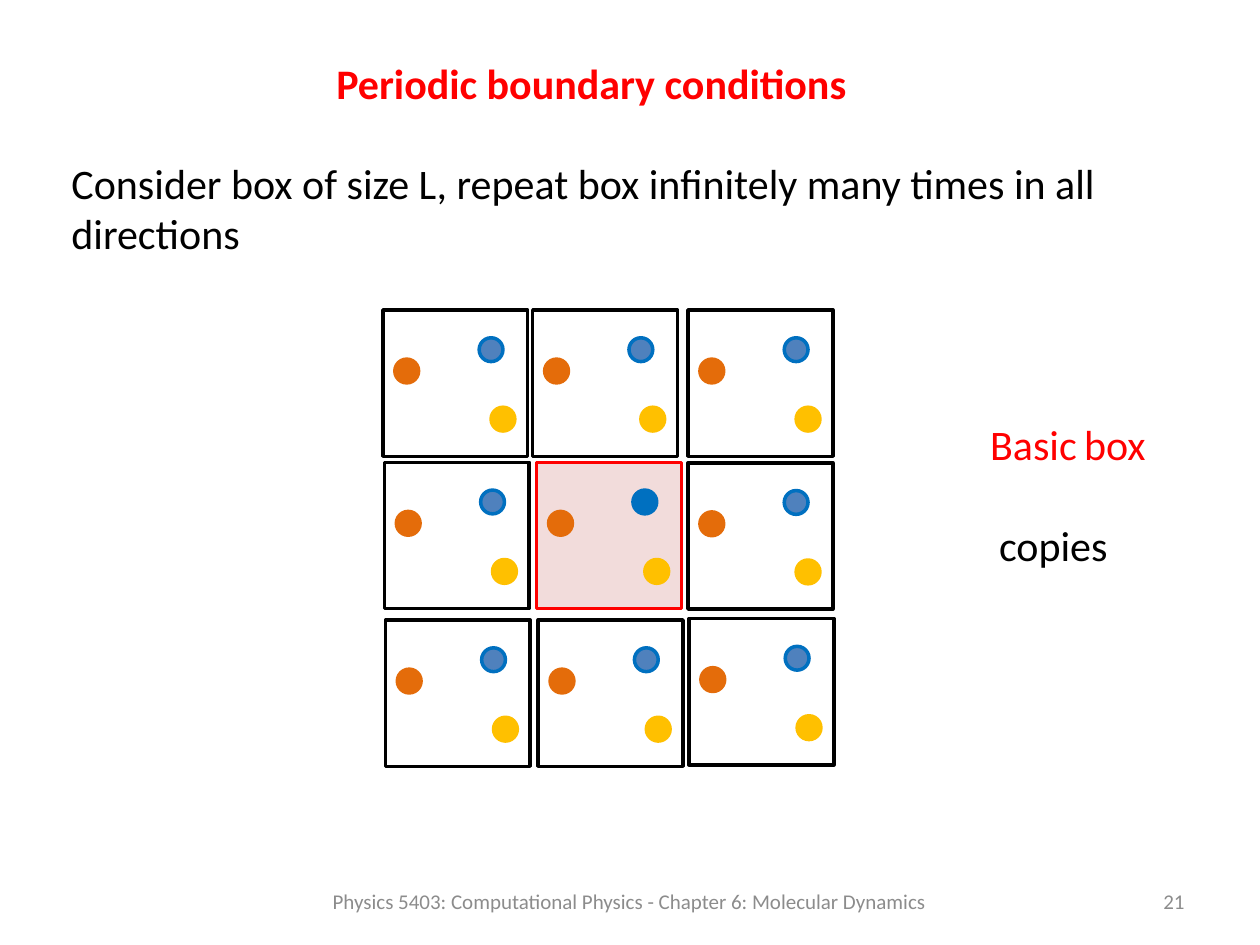
from dataclasses import dataclass

from pptx import Presentation
from pptx.dml.color import RGBColor
from pptx.enum.shapes import MSO_SHAPE
from pptx.enum.text import MSO_ANCHOR, MSO_AUTO_SIZE, PP_ALIGN
from pptx.util import Cm, Pt


@dataclass(frozen=True)
class Theme:
    font: str = "Calibri"
    body_size: int = 24
    space_size: int = 18
    footer_size: int = 12
    outline: int = 2
    black: str = "000000"
    white: str = "FFFFFF"
    red: str = "FF0000"
    pink: str = "F2DCDB"
    grey: str = "8C8C8C"
    blue: str = "0070C0"
    soft_blue: str = "4F81BD"
    yellow: str = "FFC000"
    orange: str = "E46C0A"


THEME = Theme()

CELL_WIDTH, CELL_HEIGHT = 2.92, 2.95
PARTICLE_SIZE = 0.48
BASIC_CELL = (1, 1)
# Left and top of each cell in cm, by row; the copies sit slightly off the grid.
CELL_ORIGINS = [
    [(7.72, 6.25), (10.74, 6.25), (13.87, 6.25)],
    [(7.75, 9.32), (10.82, 9.32), (13.87, 9.33)],
    [(7.77, 12.5), (10.85, 12.5), (13.89, 12.47)],
]


def add_text(page, box, lines, color, size=THEME.body_size, bold=False,
             align=PP_ALIGN.LEFT, anchor=MSO_ANCHOR.TOP, wrap=True, grow=True):
    """Add a text box; each line is a list of (wording, size or None) spans."""
    frame = page.shapes.add_textbox(*map(Cm, box)).text_frame
    frame.word_wrap = wrap
    frame.vertical_anchor = anchor
    if grow:
        frame.auto_size = MSO_AUTO_SIZE.SHAPE_TO_FIT_TEXT
    for index, spans in enumerate(lines):
        para = frame.add_paragraph() if index else frame.paragraphs[0]
        para.alignment = align
        for wording, own_size in spans:
            span = para.add_run()
            span.text = wording
            span.font.name = THEME.font
            span.font.size = Pt(own_size or size)
            span.font.bold = bold
            span.font.color.rgb = RGBColor.from_string(color)


def add_outlined(group, kind, box, fill, line):
    shape = group.shapes.add_shape(kind, *map(Cm, box))
    shape.shadow.inherit = False
    shape.fill.solid()
    shape.fill.fore_color.rgb = RGBColor.from_string(fill)
    shape.line.color.rgb = RGBColor.from_string(line)
    shape.line.width = Pt(THEME.outline)


def add_cell(page, left, top, basic):
    """Add one simulation box with its three particles, as a group."""
    group = page.shapes.add_group_shape()
    fill, line = (THEME.pink, THEME.red) if basic else (THEME.white, THEME.black)
    add_outlined(group, MSO_SHAPE.RECTANGLE,
                 (left, top, CELL_WIDTH, CELL_HEIGHT), fill, line)
    particles = [
        (1.94, 0.56, THEME.blue if basic else THEME.soft_blue, THEME.blue),
        (2.18, 1.96, THEME.yellow, THEME.yellow),
        (0.24, 0.99, THEME.orange, THEME.orange),
    ]
    for across, down, fill, line in particles:
        add_outlined(group, MSO_SHAPE.OVAL,
                     (left + across, top + down, PARTICLE_SIZE, PARTICLE_SIZE),
                     fill, line)


def add_lattice(page):
    for row, origins in enumerate(CELL_ORIGINS):
        for column, (left, top) in enumerate(origins):
            add_cell(page, left, top, (row, column) == BASIC_CELL)


def add_heading(page):
    add_text(page, (6.53, 1.04, 12.34, 1.27),
             [[("Periodic boundary conditions", None)]], THEME.red, bold=True)
    add_text(page, (1.19, 3.05, 21.34, 2.31), [
        [("Consider box of size L, repeat box infinitely many times in all", None)],
        [("directions", None)],
    ], THEME.black, wrap=False)


def add_legend(page):
    add_text(page, (19.71, 8.31, 3.68, 1.27),
             [[("Basic", None), (" ", THEME.space_size), ("box", None)]],
             THEME.red, wrap=False)
    add_text(page, (19.89, 10.34, 2.72, 1.27), [[("copies", None)]],
             THEME.black, wrap=False)


def add_footer(page):
    course = "Physics 5403: Computational Physics - Chapter 6: Molecular Dynamics"
    for left, width, wording, align in [
        (4.65, 16.08, course, PP_ALIGN.CENTER),
        (18.2, 5.93, "21", PP_ALIGN.RIGHT),
    ]:
        add_text(page, (left, 17.65, width, 1.02), [[(wording, None)]], THEME.grey,
                 THEME.footer_size, align=align, anchor=MSO_ANCHOR.MIDDLE, grow=False)


def main():
    deck = Presentation()
    deck.slide_width, deck.slide_height = Cm(25.4), Cm(19.05)
    page = deck.slides.add_slide(deck.slide_layouts[6])
    add_footer(page)
    add_heading(page)
    add_lattice(page)
    add_legend(page)
    deck.save("out.pptx")


if __name__ == "__main__":
    main()
